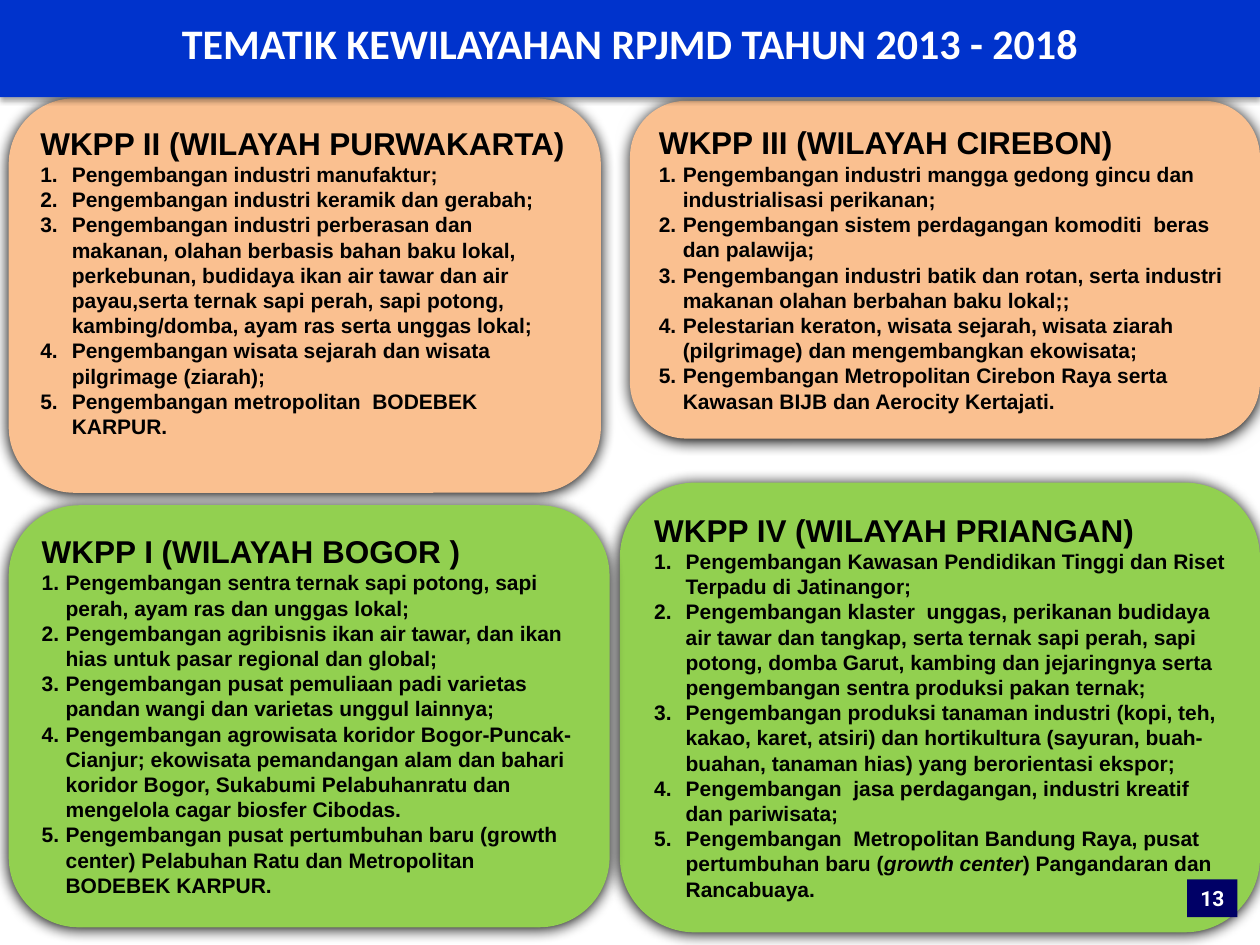
"""Builds a slide of four regional development themes."""
from lxml import etree
from pptx import Presentation
from pptx import util as u
from pptx.dml.color import RGBColor
from pptx.enum import shapes, text
from pptx.oxml import ns

PEACH = RGBColor(0xFA, 0xC0, 0x90)
GREEN = RGBColor(0x92, 0xD0, 0x50)
BLUE = RGBColor(0x00, 0x33, 0xCC)
NAVY = RGBColor(0x00, 0x00, 0x66)
BLACK = RGBColor(0, 0, 0)
WHITE = RGBColor(0xFF, 0xFF, 0xFF)

PANELS = [
    ("WKPP II (WILAYAH PURWAKARTA)", PEACH, (5, 56.2, 338.4, 225.4), 18, [
        "Pengembangan industri manufaktur;",
        "Pengembangan industri keramik dan gerabah;",
        "Pengembangan industri perberasan dan makanan, olahan berbasis bahan baku lokal, "
        "perkebunan, budidaya ikan air tawar dan air payau,serta ternak sapi perah, "
        "sapi potong, kambing/domba, ayam ras serta unggas lokal;",
        "Pengembangan wisata sejarah dan wisata pilgrimage (ziarah);",
        "Pengembangan metropolitan  BODEBEK KARPUR.",
    ]),
    ("WKPP III (WILAYAH CIREBON)", PEACH, (360, 57.6, 360, 193), 13.7, [
        "Pengembangan industri mangga gedong gincu dan  industrialisasi perikanan;",
        "Pengembangan sistem perdagangan komoditi  beras dan palawija;",
        "Pengembangan industri batik dan rotan, serta industri makanan olahan "
        "berbahan baku lokal;;",
        "Pelestarian keraton, wisata sejarah, wisata ziarah (pilgrimage) dan "
        "mengembangkan ekowisata;",
        "Pengembangan Metropolitan Cirebon Raya serta Kawasan BIJB dan Aerocity Kertajati.",
    ]),
    ("WKPP IV (WILAYAH PRIANGAN)", GREEN, (354.2, 275.8, 365.8, 257), 18, [
        "Pengembangan Kawasan Pendidikan Tinggi dan Riset Terpadu di Jatinangor;",
        "Pengembangan klaster  unggas, perikanan budidaya air tawar dan tangkap, serta "
        "ternak sapi perah, sapi potong, domba Garut, kambing dan jejaringnya serta "
        "pengembangan sentra produksi pakan ternak;",
        "Pengembangan produksi tanaman industri (kopi, teh, kakao, karet, atsiri) dan "
        "hortikultura (sayuran, buah-buahan, tanaman hias) yang berorientasi ekspor;",
        "Pengembangan  jasa perdagangan, industri kreatif dan pariwisata;",
        "Pengembangan  Metropolitan Bandung Raya, pusat pertumbuhan baru "
        "(*growth center*) Pangandaran dan Rancabuaya.",
    ]),
    ("WKPP I (WILAYAH BOGOR )", GREEN, (5, 288.7, 343.4, 241.2), 13.7, [
        "Pengembangan sentra ternak sapi potong, sapi perah, ayam ras dan unggas lokal;",
        "Pengembangan agribisnis ikan air tawar, dan ikan hias untuk pasar regional "
        "dan global;",
        "Pengembangan pusat pemuliaan padi varietas pandan wangi dan varietas unggul lainnya;",
        "Pengembangan agrowisata koridor Bogor-Puncak-Cianjur; ekowisata pemandangan alam "
        "dan bahari koridor Bogor, Sukabumi Pelabuhanratu dan mengelola cagar biosfer Cibodas.",
        "Pengembangan pusat pertumbuhan baru (growth center) Pelabuhan Ratu dan "
        "Metropolitan  BODEBEK KARPUR.",
    ]),
]


class Deck:
    def __init__(self, slide, font):
        self.slide, self.font = slide, font

    def block(self, kind, box, fill):
        shape = self.slide.shapes.add_shape(kind, *map(u.Pt, box))
        shape.shadow.inherit = False
        shape.fill.solid()
        shape.fill.fore_color.rgb = fill
        shape.line.fill.background()
        frame = shape.text_frame
        frame.word_wrap = True
        frame.vertical_anchor = text.MSO_ANCHOR.TOP
        return shape

    def shade(self, shape, blur, dist, alpha):
        effect = shape._element.spPr.find(ns.qn("a:effectLst"))
        outer = etree.SubElement(effect, ns.qn("a:outerShdw"), blurRad=str(u.Pt(blur)),
                                 dist=str(u.Pt(dist)), dir="5400000", rotWithShape="0")
        color = etree.SubElement(outer, ns.qn("a:srgbClr"), val=str(BLACK))
        etree.SubElement(color, ns.qn("a:alpha"), val=str(alpha * 1000))

    def label(self, para, words, size, color=BLACK, font=None, align=text.PP_ALIGN.LEFT):
        para.alignment = align
        style = para.font
        style.name, style.size, style.bold = font or self.font, u.Pt(size), True
        style.color.rgb = color
        for i, part in enumerate(words.split("*")):
            run = para.add_run()
            run.text = part
            if i % 2:
                run.font.italic = True

    def number(self, para, indent):
        props = para._p.get_or_add_pPr()
        props.set("marL", str(u.Pt(indent)))
        props.set("indent", str(-u.Pt(indent)))
        mark = etree.Element(ns.qn("a:buAutoNum"), type="arabicPeriod")
        props.insert(0, mark)

    def panel(self, head, fill, box, indent, items):
        shape = self.block(shapes.MSO_SHAPE.ROUNDED_RECTANGLE, box, fill)
        self.shade(shape, 8.5, 1, 100)
        frame = shape.text_frame
        self.label(frame.paragraphs[0], head, 18)
        for item in items:
            para = frame.add_paragraph()
            self.label(para, item, 12)
            self.number(para, indent)

    def title(self, words, box):
        shape = self.block(shapes.MSO_SHAPE.RECTANGLE, box, BLUE)
        self.shade(shape, 3.1, 1.8, 35)
        frame = shape.text_frame
        frame.vertical_anchor = text.MSO_ANCHOR.MIDDLE
        frame.margin_bottom = u.Pt(8)
        self.label(frame.paragraphs[0], words, 24, WHITE, "Calibri", text.PP_ALIGN.CENTER)

    def badge(self, words, box):
        frame = self.block(shapes.MSO_SHAPE.RECTANGLE, box, NAVY).text_frame
        frame.word_wrap = False
        self.label(frame.paragraphs[0], words, 12, WHITE, "Roboto", text.PP_ALIGN.CENTER)


def main():
    prs = Presentation()
    prs.slide_width, prs.slide_height = u.Pt(720), u.Pt(540)
    deck = Deck(prs.slides.add_slide(prs.slide_layouts[6]), "Arial")
    for panel in PANELS:
        deck.panel(*panel)
    deck.title("TEMATIK KEWILAYAHAN RPJMD TAHUN 2013 - 2018", (0, -2, 720, 57.6))
    deck.badge("13", (678.4, 502.5, 28.8, 21.6))
    prs.save("out.pptx")


if __name__ == "__main__":
    main()
